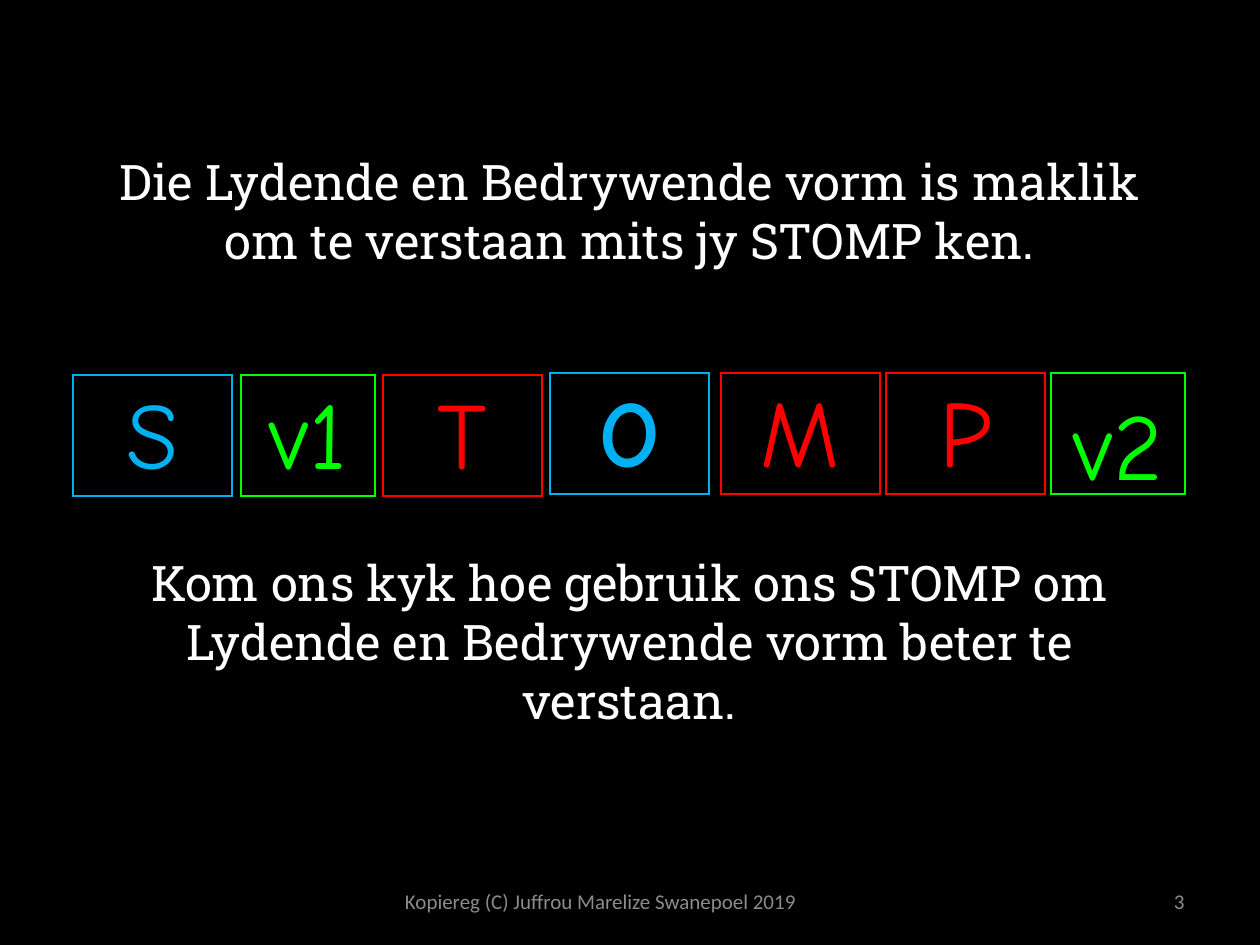
from pptx import Presentation
from pptx.dml.color import RGBColor
from pptx.enum.shapes import MSO_SHAPE
from pptx.enum.text import MSO_ANCHOR, PP_ALIGN
from pptx.oxml.ns import qn
from pptx.util import Emu, Pt

RECTANGLE = MSO_SHAPE.RECTANGLE
TOP, MIDDLE = MSO_ANCHOR.TOP, MSO_ANCHOR.MIDDLE
CENTER, RIGHT = PP_ALIGN.CENTER, PP_ALIGN.RIGHT

BLACK = RGBColor(0x00, 0x00, 0x00)
WHITE = RGBColor(0xFF, 0xFF, 0xFF)
GRAY = RGBColor(0x8C, 0x8C, 0x8C)
BLUE = RGBColor(0x00, 0xB0, 0xF0)
GREEN = RGBColor(0x00, 0xFF, 0x00)
RED = RGBColor(0xFF, 0x00, 0x00)

BODY_FONT, LETTER_FONT, FOOTER_FONT = "Roboto Slab", "Comic Neue", "Calibri"
EMU_PER_PX = 914400 / 126
INSET = 13
WIDE, NARROW, BOX_HEIGHT = 159, 134, 121
UPPER, LOWER = 373, 375

STATEMENTS = [
    ("Die Lydende en Bedrywende vorm is maklik om te verstaan mits jy STOMP ken.", 3),
    ("Kom ons kyk hoe gebruik ons STOMP om Lydende en Bedrywende vorm beter te verstaan.", 162),
]
LETTERS = [
    ("S", 73, LOWER, WIDE, BLUE),
    ("v1", 241, LOWER, NARROW, GREEN),
    ("T", 383, LOWER, WIDE, RED),
    ("O", 550, UPPER, WIDE, BLUE),
    ("M", 721, UPPER, WIDE, RED),
    ("P", 886, UPPER, WIDE, RED),
    ("v2", 1051, UPPER, NARROW, GREEN),
]


def px(length):
    return Emu(round(length * EMU_PER_PX))


def write(para, text, *, font, size, color, align=CENTER, bold=False, spacing=1.0, before=0):
    para.alignment = align
    para.line_spacing = spacing
    para.space_before = Pt(before)
    span = para.add_run()
    span.text = text
    span.font.name = font
    span.font.size = Pt(size)
    span.font.bold = bold
    span.font.color.rgb = color


class SlideBuilder:
    def __init__(self, deck):
        self.page = deck.slides.add_slide(deck.slide_layouts[1])
        self.page.background.fill.solid()
        self.page.background.fill.fore_color.rgb = BLACK
        title = self.page.shapes.title.element
        title.getparent().remove(title)

    def body(self, left, top, width, height, statements):
        body = self.page.placeholders[1]
        body.left, body.top, body.width, body.height = map(px, (left, top, width, height))
        frame = body.text_frame
        for index, (text, before) in enumerate(statements):
            para = frame.add_paragraph() if index else frame.paragraphs[0]
            write(para, text, font=BODY_FONT, size=28, color=WHITE, before=before)
            properties = para._p.get_or_add_pPr()
            properties.set("marL", "0")
            properties.set("indent", "0")
            properties.append(properties.makeelement(qn("a:buNone"), {}))

    def letter_box(self, text, left, top, width, color):
        box = self.page.shapes.add_shape(RECTANGLE, *map(px, (left, top, width, BOX_HEIGHT)))
        box.shadow.inherit = False
        box.fill.solid()
        box.fill.fore_color.rgb = BLACK
        box.line.color.rgb = color
        box.line.width = Pt(0.75)
        outline = box.line._get_or_add_ln()
        outline.append(outline.makeelement(qn("a:miter"), {"lim": "800000"}))
        frame = box.text_frame
        frame.vertical_anchor = TOP
        frame.margin_left = frame.margin_right = px(INSET)
        frame.margin_top = frame.margin_bottom = px(INSET)
        write(frame.paragraphs[0], text, font=LETTER_FONT, size=54, color=color,
              bold=text == "O", spacing=1.0 if text == "v2" else 0.9)

    def footer(self, text, left, width, align):
        box = self.page.shapes.add_textbox(*map(px, (left, 876, width, 50)))
        frame = box.text_frame
        frame.word_wrap = True
        frame.vertical_anchor = MIDDLE
        write(frame.paragraphs[0], text, font=FOOTER_FONT, size=12, color=GRAY, align=align)


def main():
    deck = Presentation()
    deck.slide_width, deck.slide_height = px(1260), px(945)
    slide = SlideBuilder(deck)
    slide.body(84, 145, 1091, 605, STATEMENTS)
    for letter in LETTERS:
        slide.letter_box(*letter)
    slide.footer("Kopiereg (C) Juffrou Marelize Swanepoel 2019", 372, 457, CENTER)
    slide.footer("3", 903, 294, RIGHT)
    deck.save("out.pptx")


if __name__ == "__main__":
    main()
